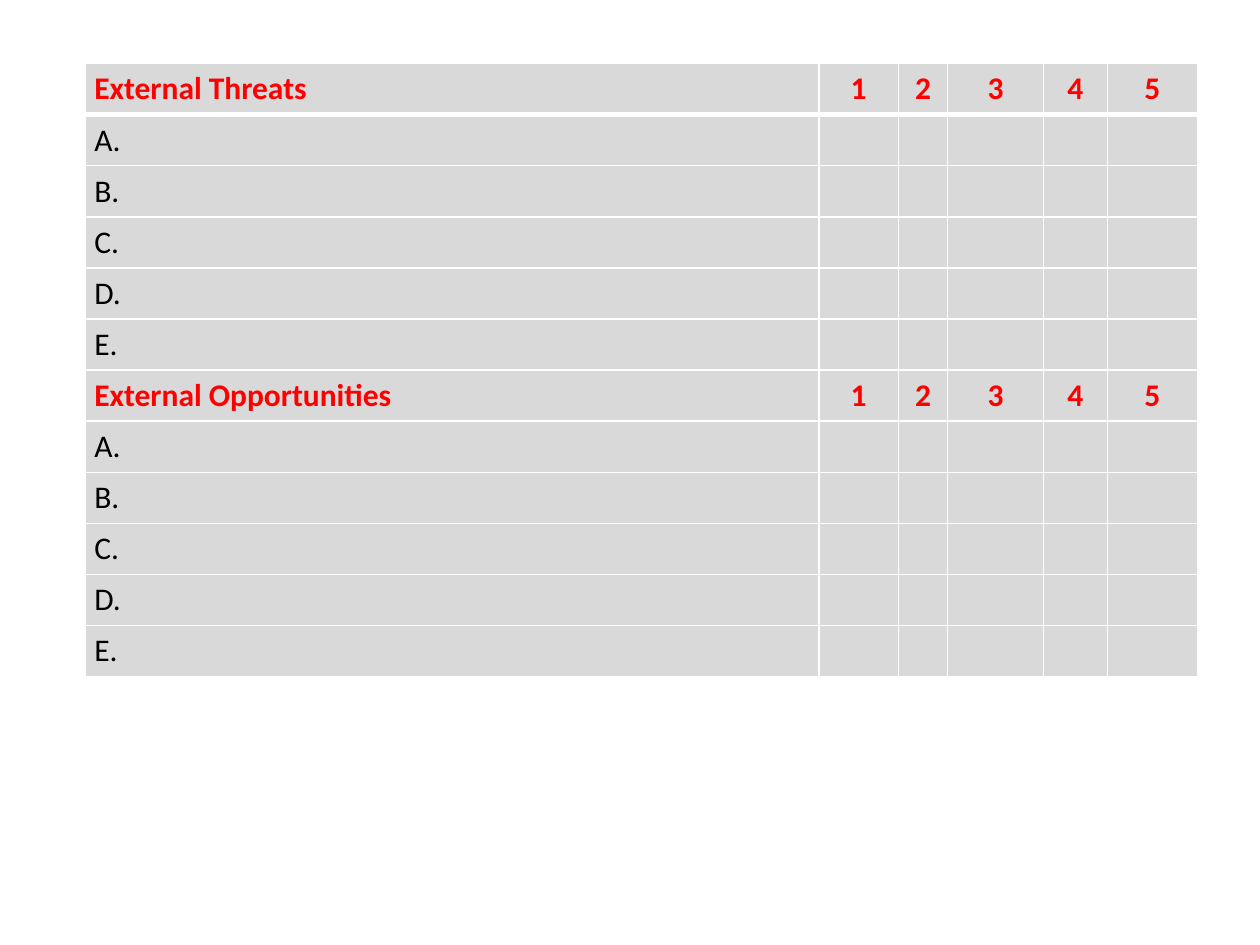
from lxml.etree import SubElement as Sub
from pptx import Presentation
from pptx.dml.color import RGBColor
from pptx.enum.text import MSO_ANCHOR as Anchor, PP_ALIGN as Align
from pptx.oxml.ns import qn
from pptx.util import Pt

RED, BLACK, GREY, WHITE = "FF0000", "000000", "D9D9D9", "FFFFFF"
COLS = [419.5, 45.4, 28.2, 54.6, 36.6, 51.5]
HEADS = ["External Threats", "External Opportunities"]
MARKS = ["1", "2", "3", "4", "5"]
ITEMS = ["A.", "B.", "C.", "D.", "E."]


def paint(hue):
    """Turn a hex string into a colour."""
    return RGBColor.from_string(hue)


def apply(item, style):
    """Set each named attribute of an item."""
    for name, value in style.items():
        setattr(item, name, value)


def edge(cell, widths):
    """Draw white borders of the given widths in points."""
    for side, width in widths.items():
        line = Sub(cell._tc.get_or_add_tcPr(), qn(f"a:ln{side}"), w=str(Pt(width)))
        Sub(Sub(line, qn("a:solidFill")), qn("a:srgbClr"), val=WHITE)


def fill(cell, text, head, align, widths):
    """Format one cell and write its text."""
    edge(cell, widths)
    cell.fill.solid()
    cell.fill.fore_color.rgb = paint(GREY)
    apply(cell, {"margin_left": Pt(5.4), "margin_right": Pt(5.4), "margin_top": 0,
                 "margin_bottom": 0, "vertical_anchor": Anchor.MIDDLE})
    para = cell.text_frame.paragraphs[0]
    para.alignment = align
    if text:
        run = para.add_run()
        run.text = text
        apply(run.font, {"name": "Calibri", "size": Pt(18), "bold": head})
        run.font.color.rgb = paint(RED if head else BLACK)


def grid(slide, left, top, width, height):
    """Place the rating table in the given box."""
    rows = []
    for title in HEADS:
        rows.append([title] + MARKS)
        rows += [[item] + [""] * len(MARKS) for item in ITEMS]
    box = [Pt(v) for v in (left, top, width, height)]
    table = slide.shapes.add_table(len(rows), len(COLS), *box).table
    for col, part in zip(table.columns, COLS):
        col.width = Pt(width * part / sum(COLS))
    for r, row in enumerate(rows):
        table.rows[r].height = Pt(height / len(rows))
        widths = {"L": 1, "R": 1, "T": 3 if r == 1 else 1, "B": 3 if r == 0 else 1}
        for c, text in enumerate(row):
            align = Align.CENTER if c else Align.LEFT
            fill(table.cell(r, c), text, row[0] in HEADS, align, widths)


def main():
    """Build and save the slide."""
    deck = Presentation()
    apply(deck, {"slide_width": Pt(720), "slide_height": Pt(540)})
    slide = deck.slides.add_slide(deck.slide_layouts[6])
    grid(slide, 48.5, 36.3, 635.8, 350.4)
    deck.save("out.pptx")


if __name__ == "__main__":
    main()
